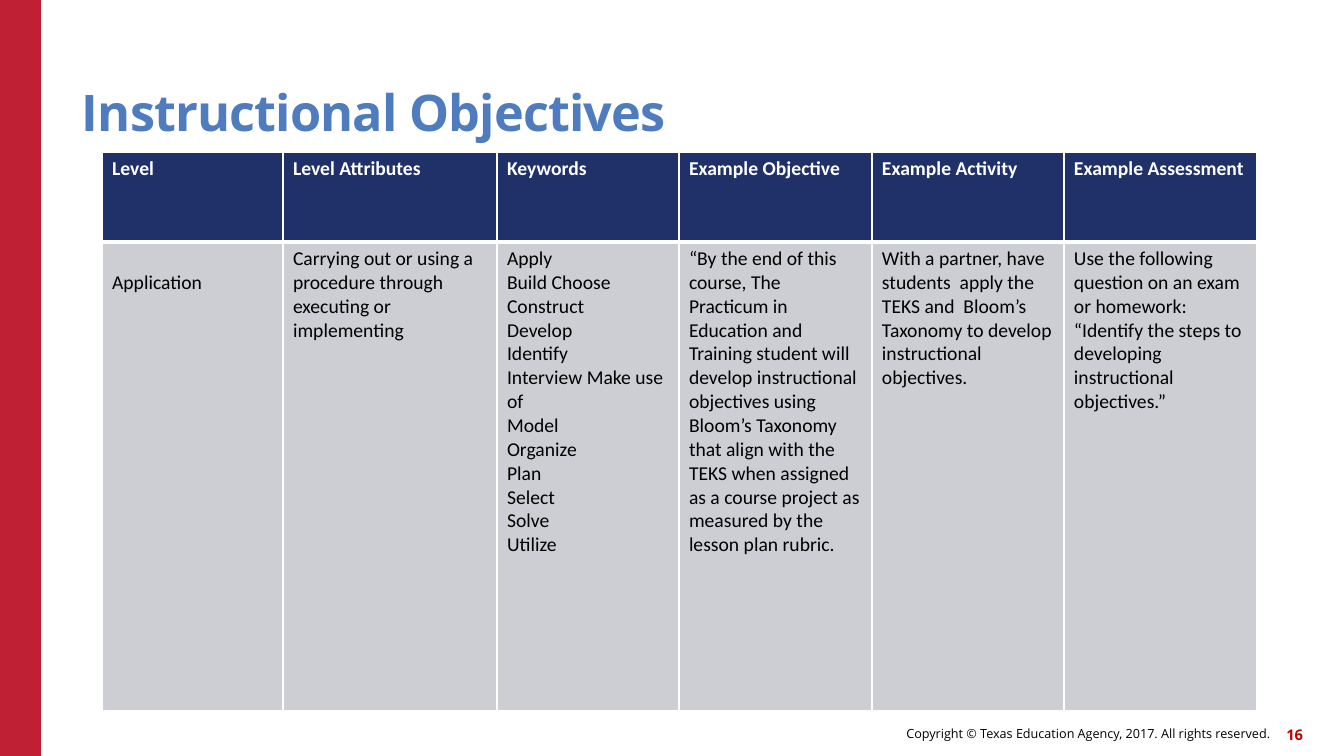
from dataclasses import dataclass

from lxml.etree import SubElement
from pptx import Presentation
from pptx.dml.color import RGBColor
from pptx.enum.shapes import MSO_SHAPE
from pptx.enum.text import MSO_ANCHOR, PP_ALIGN
from pptx.oxml.ns import qn
from pptx.slide import Slide
from pptx.table import _Cell
from pptx.text.text import _Paragraph
from pptx.util import Emu, Pt

PX_PER_INCH = 100.8
WHITE, BLACK = "FFFFFF", "000000"
RED, NAVY, GREY = "C02033", "203069", "CDCDD4"


def px(length: int) -> Emu:
    return Emu(round(length * 914400 / PX_PER_INCH))


def color(hex_code: str) -> RGBColor:
    return RGBColor.from_string(hex_code)


@dataclass(frozen=True)
class Style:
    font: str
    size: float
    color: str
    bold: bool = False
    spacing: int = 0  # hundredths of a point


@dataclass(frozen=True)
class Label:
    text: str
    left: int
    top: int
    width: int
    height: int
    style: Style
    align: PP_ALIGN = PP_ALIGN.RIGHT
    anchor: MSO_ANCHOR = MSO_ANCHOR.MIDDLE
    line_spacing: float = 1.0


@dataclass(frozen=True)
class Column:
    heading: str
    width: int
    lines: tuple[str, ...]
    body_inset: int = 5


LABELS = [
    Label("Copyright © Texas Education Agency, 2017. All rights reserved.",
          619, 718, 651, 32, Style("Open Sans", 9, BLACK)),
    Label("16", 1261, 719, 42, 32, Style("Open Sans", 10.5, "C00000", True)),
    Label("Instructional Objectives", 82, 45, 1109, 97,
          Style("Open Sans", 36, "4E7CBE", True, -60),
          PP_ALIGN.LEFT, MSO_ANCHOR.BOTTOM, 0.9),
]

COLUMNS = [
    Column("Level", 181, ("Application",), body_inset=29),
    Column("Level Attributes", 214, (
        "Carrying out or using a procedure through executing or implementing",)),
    Column("Keywords", 182, (
        "Apply", "Build Choose Construct", "Develop", "Identify",
        "Interview Make use of", "Model", "Organize", "Plan", "Select",
        "Solve", "Utilize")),
    Column("Example Objective", 193, (
        "“By the end of this course, The Practicum in Education and Training "
        "student will develop instructional objectives using Bloom’s Taxonomy "
        "that align with the TEKS when assigned as a course project as "
        "measured by the lesson plan rubric.”"[:-1],)),
    Column("Example Activity", 192, (
        "With a partner, have students  apply the TEKS and  Bloom’s Taxonomy "
        "to develop instructional objectives.",)),
    Column("Example Assessment", 193, (
        "Use the following question on an exam or homework: “Identify the "
        "steps to developing instructional objectives.”",)),
]
TABLE_LEFT, TABLE_TOP = 102, 152
HEADER_HEIGHT, BODY_HEIGHT = 90, 469
HEADER_STYLE = Style("Calibri", 14, WHITE, True)
BODY_STYLE = Style("Calibri", 14, BLACK)


def add_text(paragraph: _Paragraph, text: str, style: Style) -> None:
    run = paragraph.add_run()
    run.text = text
    run.font.name = style.font
    run.font.size = Pt(style.size)
    run.font.bold = style.bold
    run.font.color.rgb = color(style.color)
    if style.spacing:
        run.font._element.set("spc", str(style.spacing))


def add_label(slide: Slide, label: Label) -> None:
    box = slide.shapes.add_textbox(
        px(label.left), px(label.top), px(label.width), px(label.height))
    frame = box.text_frame
    frame.word_wrap = True
    frame.vertical_anchor = label.anchor
    frame.margin_left = frame.margin_right = 0
    frame.margin_top = frame.margin_bottom = 0
    paragraph = frame.paragraphs[0]
    paragraph.alignment = label.align
    paragraph.line_spacing = label.line_spacing
    add_text(paragraph, label.text, label.style)


def set_borders(cell: _Cell, top: float, bottom: float) -> None:
    properties = cell._tc.get_or_add_tcPr()
    for side, points in (("L", 1), ("R", 1), ("T", top), ("B", bottom)):
        line = SubElement(properties, qn(f"a:ln{side}"), w=str(Pt(points)))
        fill = SubElement(line, qn("a:solidFill"))
        SubElement(fill, qn("a:srgbClr"), val=WHITE)


def fill_cell(cell: _Cell, lines: tuple[str, ...], style: Style, fill: str,
              top: float, bottom: float, inset: int = 5) -> None:
    set_borders(cell, top, bottom)
    cell.fill.solid()
    cell.fill.fore_color.rgb = color(fill)
    cell.margin_top = px(inset)
    frame = cell.text_frame
    for number, text in enumerate(lines):
        paragraph = frame.add_paragraph() if number else frame.paragraphs[0]
        add_text(paragraph, text, style)


def add_objectives(slide: Slide) -> None:
    width = sum(column.width for column in COLUMNS)
    table = slide.shapes.add_table(
        2, len(COLUMNS), px(TABLE_LEFT), px(TABLE_TOP),
        px(width), px(HEADER_HEIGHT + BODY_HEIGHT)).table
    table.rows[0].height = px(HEADER_HEIGHT)
    table.rows[1].height = px(BODY_HEIGHT)
    for index, column in enumerate(COLUMNS):
        table.columns[index].width = px(column.width)
        fill_cell(table.cell(0, index), (column.heading,), HEADER_STYLE,
                  NAVY, top=1, bottom=3)
        fill_cell(table.cell(1, index), column.lines, BODY_STYLE,
                  GREY, top=3, bottom=1, inset=column.body_inset)


def main() -> None:
    presentation = Presentation()
    presentation.slide_width, presentation.slide_height = px(1344), px(756)
    slide = presentation.slides.add_slide(presentation.slide_layouts[6])

    # Red band down the left edge
    band = slide.shapes.add_shape(MSO_SHAPE.RECTANGLE, 0, 0, px(41), px(756))
    band.shadow.inherit = False
    band.fill.solid()
    band.fill.fore_color.rgb = color(RED)
    band.line.fill.background()

    # Footer and title
    for label in LABELS:
        add_label(slide, label)

    # Table of objectives
    add_objectives(slide)
    presentation.save("out.pptx")


if __name__ == "__main__":
    main()
